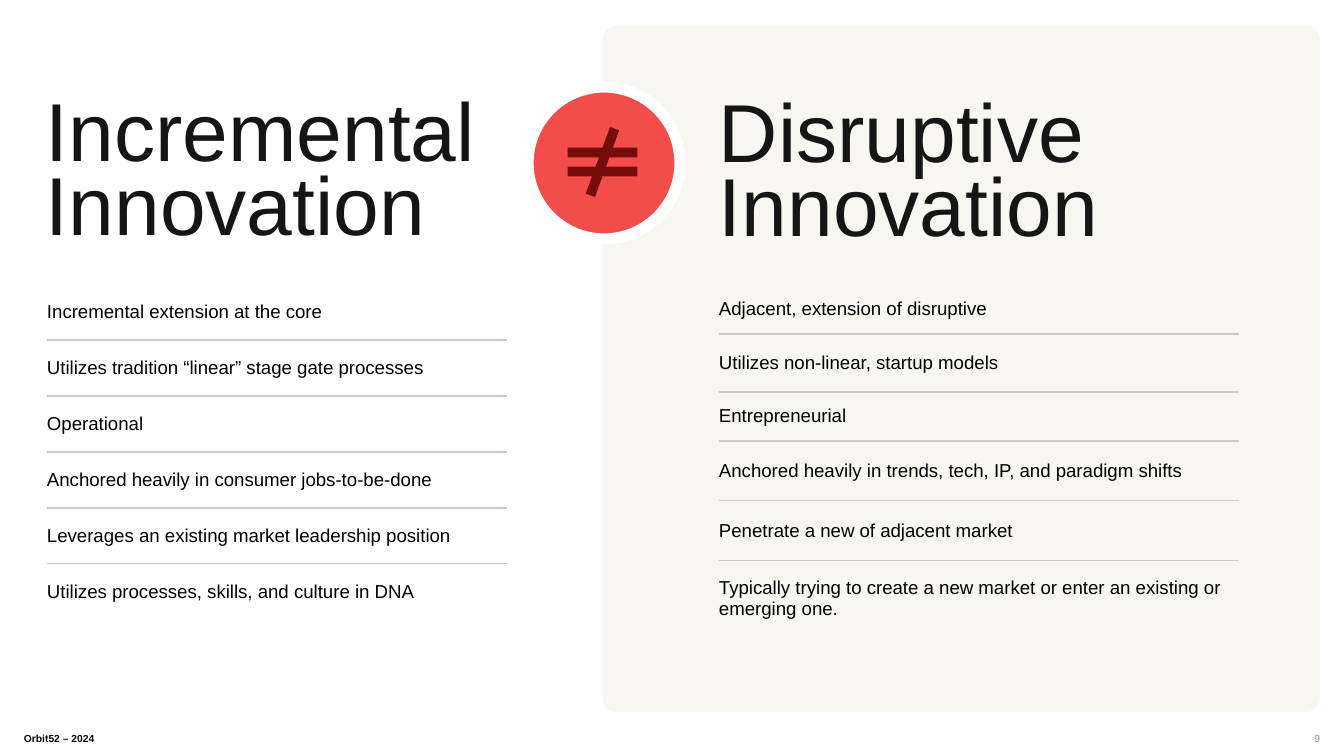
import pptx
import pptx.util
import pptx.dml.color
import pptx.enum.shapes
import pptx.enum.text
import pptx.oxml

SCALE = 914400 / 134.4
KIND = pptx.enum.shapes.MSO_SHAPE
ALIGN = pptx.enum.text.PP_ALIGN
ANCHOR = pptx.enum.text.MSO_ANCHOR
Pt = pptx.util.Pt
Color = pptx.dml.color.RGBColor.from_string

THEME = {
    "font": "Arial",
    "head": {"size": 44, "color": "151515"},
    "item": {"size": 10, "color": "000000"},
    "foot": {"size": 5.5, "color": "000000"},
    "page": {"size": 5.5, "color": "8C8C8C"},
    "panel": "F7F6F1",
    "badge": "F24D4A",
    "ring": "FFFFFF",
    "sign": "750C0A",
    "rule": "CCCCC7",
}
NO_GRID = "{2D5ABB26-0587-4C30-8999-92F81FD0307C}"


def px(*nums):
    """Turn px lengths into a list of EMU lengths."""
    return [pptx.util.Emu(round(num * SCALE)) for num in nums]


def write(frame, text, style, bold=False, align=ALIGN.LEFT, space=1.0):
    """Put one styled paragraph into a text frame."""
    frame.text = text
    para = frame.paragraphs[0]
    look = {"alignment": align, "line_spacing": space, "space_before": Pt(0)}
    for name, value in look.items():
        setattr(para, name, value)
    font = para.runs[0].font
    look = {"name": THEME["font"], "size": Pt(THEME[style]["size"]), "bold": bold}
    for name, value in look.items():
        setattr(font, name, value)
    font.color.rgb = Color(THEME[style]["color"])


deck = pptx.Presentation()
deck.slide_width, deck.slide_height = px(1344, 756)
slide = deck.slides.add_slide(deck.slide_layouts[4])
shapes = slide.shapes
for spare in list(slide.placeholders)[2:]:
    spare.element.getparent().remove(spare.element)

# Headings and footers
left, right = slide.placeholders
foot, page = [shapes.add_textbox(0, 0, 0, 0) for _ in range(2)]
texts = [
    (left, (46, 101, 566, 149), "Incremental Innovation", "head", {"space": 0.75}),
    (right, (719, 102, 575, 149), "Disruptive Innovation", "head", {"space": 0.75}),
    (foot, (24, 732, 94, 11), "Orbit52 – 2024", "foot", {"bold": True}),
    (page, (1239, 732, 81, 11), "9", "page", {"align": ALIGN.RIGHT}),
]
for box, place, text, style, extra in texts:
    box.left, box.top, box.width, box.height = px(*place)
    frame = box.text_frame
    look = {
        "margin_left": 0, "margin_top": 0, "margin_right": 0, "margin_bottom": 0,
        "word_wrap": True, "auto_size": pptx.enum.text.MSO_AUTO_SIZE.NONE,
        "vertical_anchor": ANCHOR.BOTTOM if style == "head" else ANCHOR.TOP,
    }
    for name, value in look.items():
        setattr(frame, name, value)
    write(frame, text, style, **extra)

# Panel and badge
marks = [
    (KIND.ROUNDED_RECTANGLE, (603, 26, 717, 686), "panel", [0.02]),
    (KIND.OVAL, (528, 87, 152, 152), "badge", []),
    (KIND.MATH_NOT_EQUAL, (555, 127, 95, 70), "sign", [0.14, 66, 0.13]),
]
for kind, place, tone, bends in marks:
    mark = shapes.add_shape(kind, *px(*place))
    mark.shadow.inherit = False
    mark.fill.solid()
    mark.fill.fore_color.rgb = Color(THEME[tone])
    for i, bend in enumerate(bends):
        mark.adjustments[i] = bend
    if tone == "badge":
        mark.line.color.rgb = Color(THEME["ring"])
        mark.line.width = Pt(6)
    else:
        mark.line.fill.background()
    if tone == "panel":
        shapes.element.insert(2, mark.element)  # behind the headings

# Tables ruled between rows
lists = [
    (47, 460, [56] * 6, [
        "Incremental extension at the core",
        "Utilizes tradition “linear” stage gate processes",
        "Operational",
        "Anchored heavily in consumer jobs-to-be-done",
        "Leverages an existing market leadership position",
        "Utilizes processes, skills, and culture in DNA",
    ]),
    (719, 520, [50, 58, 49, 60, 60, 75], [
        "Adjacent, extension of disruptive",
        "Utilizes non-linear, startup models",
        "Entrepreneurial",
        "Anchored heavily in trends, tech, IP, and paradigm shifts",
        "Penetrate a new of adjacent market",
        "Typically trying to create a new market or enter an existing or emerging one.",
    ]),
]
pad_x, pad_y = px(13, 8)
pads = {
    "margin_left": 0, "margin_right": pad_x, "margin_top": pad_y,
    "margin_bottom": pad_y, "vertical_anchor": ANCHOR.MIDDLE,
}
for x, width, heights, items in lists:
    table = shapes.add_table(len(items), 1, *px(x, 284, width, sum(heights))).table
    table.first_row = table.horz_banding = False
    table._tbl.tblPr[0].text = NO_GRID
    for i, (high, item) in enumerate(zip(heights, items)):
        table.rows[i].height = px(high)[0]
        cell = table.cell(i, 0)
        for name, value in pads.items():
            setattr(cell, name, value)
        write(cell.text_frame, item, "item")
        cell.fill.background()
        edges = [("lnT", i > 0), ("lnB", i < len(items) - 1)]
        for spot, (edge, shown) in enumerate(edges):
            paint = (f'<a:solidFill><a:srgbClr val="{THEME["rule"]}"/></a:solidFill>'
                     if shown else "<a:noFill/>")
            cell._tc.tcPr.insert(spot, pptx.oxml.parse_xml(
                f'<a:{edge} xmlns:a="http://schemas.openxmlformats.org/drawingml/2006/main"'
                f' w="{Pt(0.75)}">{paint}</a:{edge}>'))

deck.save("out.pptx")
